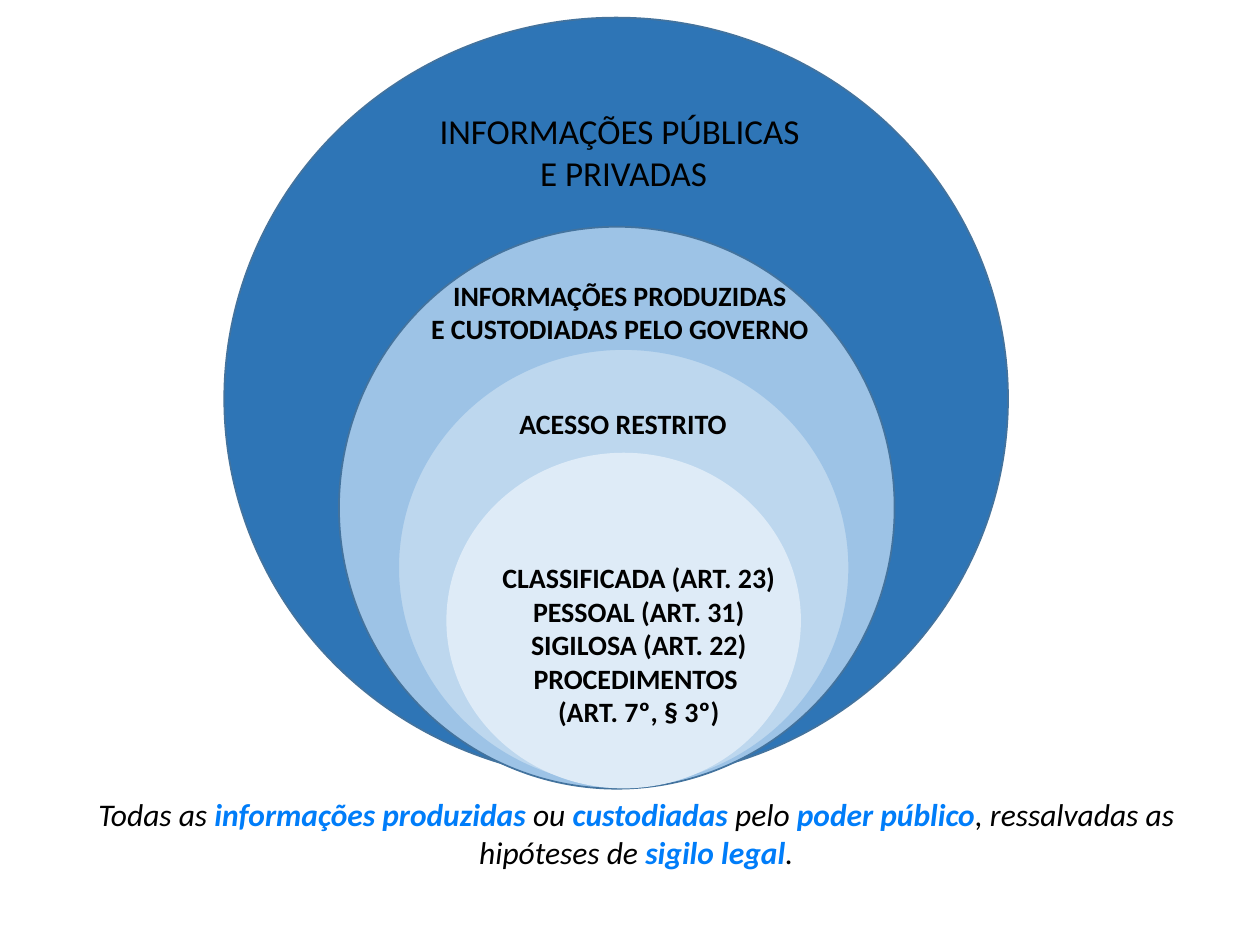
from pptx import Presentation
from pptx.dml.color import RGBColor as RGB
from pptx.enum.shapes import MSO_SHAPE as Shape
from pptx.enum.text import MSO_AUTO_SIZE as Fit, PP_ALIGN as Align
from pptx.util import Inches, Pt

BLACK = RGB(0x00, 0x00, 0x00)
BRIGHT = RGB(0x00, 0x7D, 0xF9)
EDGE = RGB(0x43, 0x73, 0x9E)
DEEP = RGB(0x2E, 0x75, 0xB6)
MID = RGB(0x9D, 0xC3, 0xE6)
LIGHT = RGB(0xBD, 0xD7, 0xEE)
PALE = RGB(0xDE, 0xEB, 0xF7)


def put(para, text, font="Calibri", size=16, color=BLACK, bold=False, italic=False):
    """Add text to a paragraph; a newline becomes a line break."""
    for i, line in enumerate(text.split("\n")):
        if i:
            para.add_line_break()
        run = para.add_run()
        run.text = line
        style = run.font
        style.name, style.size = font, Pt(size)
        style.bold, style.italic = bold, italic
        style.color.rgb = color


class Page:
    def __init__(self, slide, font="Calibri"):
        self.slide = slide
        self.font = font

    def disc(self, left, top, width, height, fill, edge):
        disc = self.slide.shapes.add_shape(
            Shape.OVAL, Inches(left), Inches(top), Inches(width), Inches(height))
        disc.shadow.inherit = False
        disc.fill.solid()
        disc.fill.fore_color.rgb = fill
        disc.line.color.rgb = edge
        disc.line.width = Pt(1)

    def text(self, left, top, width, height, paras, wrap=False, **style):
        """Each paragraph is a list of (text, extra format) parts."""
        box = self.slide.shapes.add_textbox(
            Inches(left), Inches(top), Inches(width), Inches(height))
        frame = box.text_frame
        frame.word_wrap = wrap
        frame.auto_size = Fit.SHAPE_TO_FIT_TEXT
        for i, parts in enumerate(paras):
            para = frame.add_paragraph() if i else frame.paragraphs[0]
            para.alignment = Align.CENTER
            for words, extra in parts:
                put(para, words, **{"font": self.font, **style, **extra})

    def label(self, left, top, width, height, *lines, bold=True, **style):
        paras = [[(line, {})] for line in lines]
        self.text(left, top, width, height, paras, bold=bold, **style)


def main():
    deck = Presentation()
    deck.slide_width, deck.slide_height = Inches(10), Inches(7.5)
    page = Page(deck.slides.add_slide(deck.slide_layouts[6]))

    # Closing sentence with key terms picked out
    key = {"color": BRIGHT, "bold": True}
    page.text(0.51, 6.26, 9.08, 0.71, [[
        ("Todas as ", {}), ("informações produzidas ", key),
        ("ou ", {}), ("custodiadas", key),
        (" pelo ", {}), ("poder público", key),
        (", ressalvadas as hipóteses de ", {}), ("sigilo legal", key),
        (".", {}),
    ]], wrap=True, size=18, italic=True)

    # Nested circles, outermost first
    page.disc(1.78, 0.14, 6.22, 6.05, DEEP, EDGE)
    page.disc(2.69, 1.8, 4.41, 4.46, MID, EDGE)
    page.disc(3.16, 2.77, 3.58, 3.47, LIGHT, MID)
    page.disc(3.55, 3.6, 2.8, 2.65, PALE, PALE)

    # Circle labels
    page.label(3.3, 0.82, 3.3, 0.77, "INFORMAÇÕES PÚBLICAS \nE PRIVADAS",
               bold=False, size=20, wrap=True)
    page.label(3.3, 2.16, 3.24, 0.64,
               "INFORMAÇÕES PRODUZIDAS\nE CUSTODIADAS PELO GOVERNO")
    page.label(4.01, 3.18, 1.87, 0.37, "ACESSO RESTRITO")
    page.label(3.87, 4.4, 2.4, 1.45, "CLASSIFICADA (ART. 23)",
               "PESSOAL (ART. 31)", "SIGILOSA (ART. 22)",
               "PROCEDIMENTOS ", "(ART. 7º, § 3º)")

    deck.save("out.pptx")


if __name__ == "__main__":
    main()
